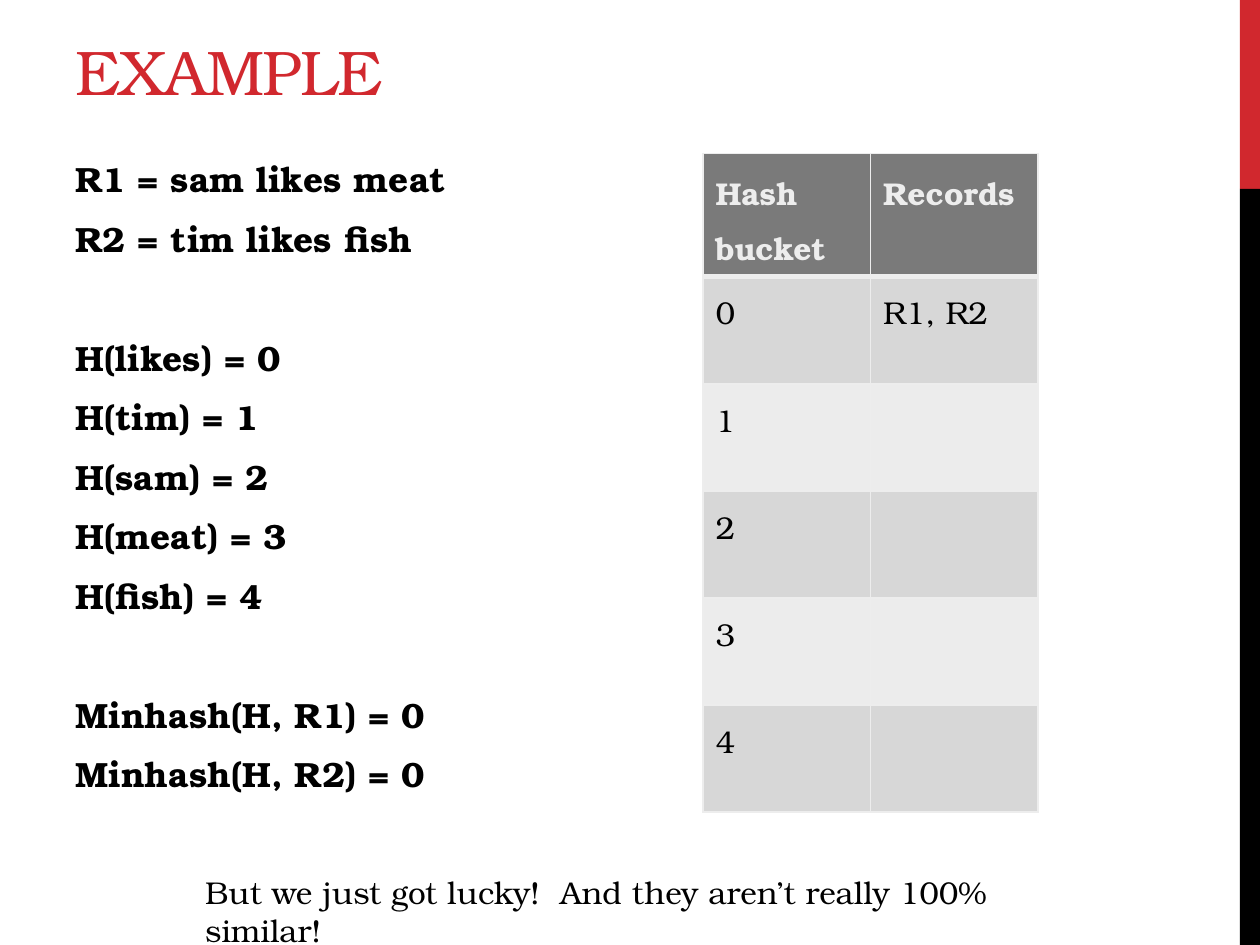
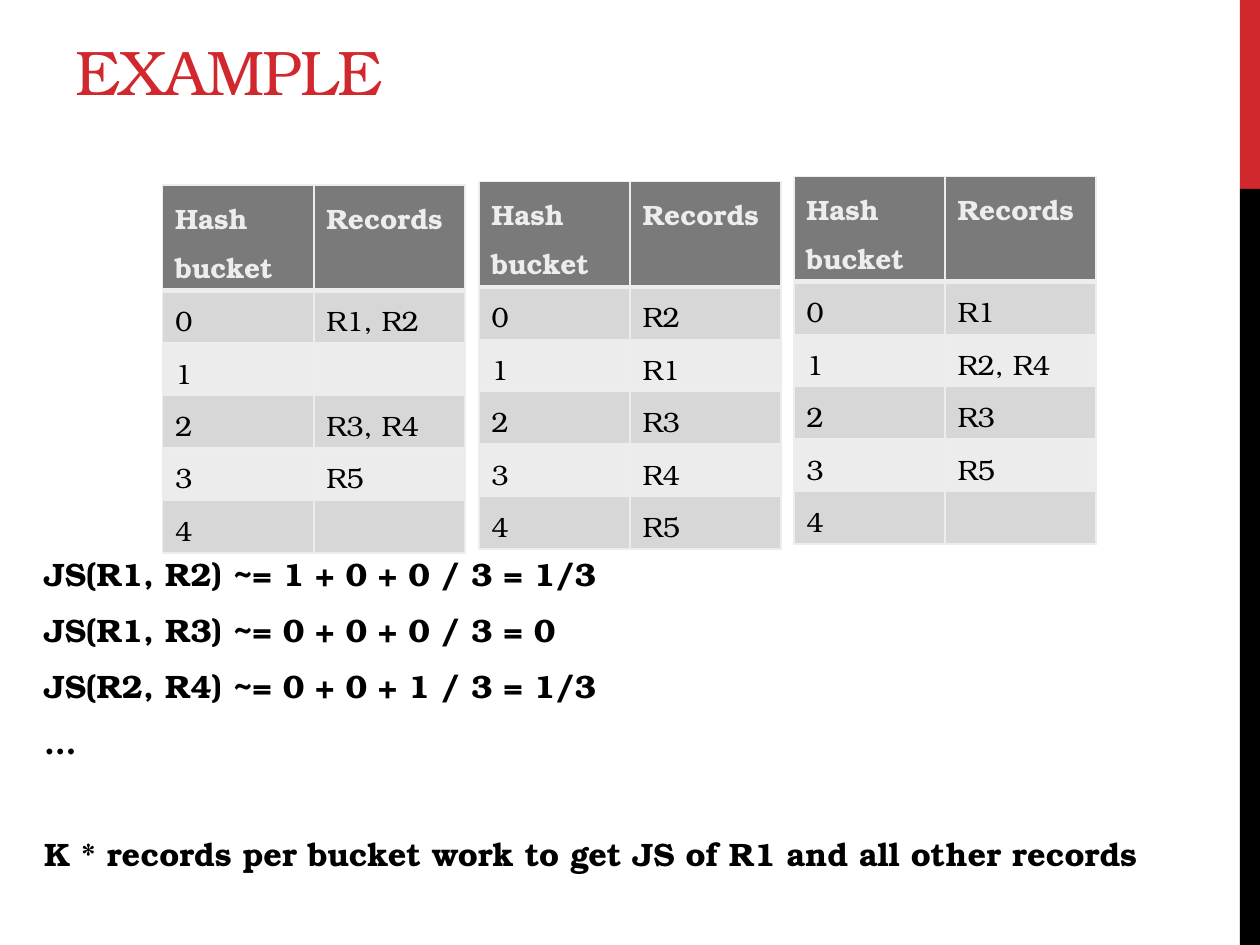
from lxml import etree
from pptx import Presentation
from pptx import util as u
from pptx.dml.color import RGBColor
from pptx.enum import shapes, text
from pptx.oxml import ns

RED = RGBColor(0xD1, 0x28, 0x2E)
BLACK = RGBColor(0x00, 0x00, 0x00)
HEADER_GRAY = RGBColor(0x7A, 0x7A, 0x7A)
DARK_BAND = RGBColor(0xD7, 0xD7, 0xD7)
LIGHT_BAND = RGBColor(0xEC, 0xEC, 0xEC)
PALE = RGBColor(0xED, 0xED, 0xED)
FONT = "TeX Gyre Bonum"
TABLE_HEADER = ("Hash bucket", "Records")


def place(shape, left, top, width, height):
    box = {"left": left, "top": top, "width": width, "height": height}
    for name, value in box.items():
        setattr(shape, name, u.Inches(value))


def add_run(paragraph, words, size, color, bold=False):
    run = paragraph.add_run()
    run.text = words
    font_values = {"name": FONT, "size": u.Pt(size), "bold": bold}
    for name, value in font_values.items():
        setattr(run.font, name, value)
    run.font.color.rgb = color
    return run


def add_master_bands(presentation, slide):
    """Draw the right-hand bands and move them to the slide master."""
    master_tree = presentation.slide_master.shapes.element
    bands = ((0, 1.5, RED), (1.5, 6, BLACK))
    for number, (top, height, color) in enumerate(bands):
        band = slide.shapes.add_shape(
            shapes.MSO_SHAPE.RECTANGLE, u.Inches(9.84), u.Inches(top),
            u.Inches(0.16), u.Inches(height))
        band.shadow.inherit = False
        band.fill.solid()
        band.fill.fore_color.rgb = color
        band.line.fill.background()
        band.element.nvSpPr.cNvPr.set("id", str(100 + number))
        master_tree.append(band.element)


def set_title(slide, words):
    title = slide.shapes.title
    place(title, 0.5, 0.03, 9.34, 0.88)
    frame = title.text_frame
    frame.auto_size = text.MSO_AUTO_SIZE.NONE
    frame.vertical_anchor = text.MSO_ANCHOR.BOTTOM
    paragraph = frame.paragraphs[0]
    paragraph.alignment = text.PP_ALIGN.LEFT
    run = add_run(paragraph, words, 36, RED)
    run.font._element.set("spc", "-60")


def set_body(slide, box, groups, size):
    """Fill the body with groups of lines, one line's height apart."""
    body = slide.placeholders[1]
    place(body, *box)
    frame = body.text_frame
    frame.auto_size = text.MSO_AUTO_SIZE.NONE
    before, after = 0.2 * size, 6
    line_pitch = 1.2 * size + before + after
    paragraph = frame.paragraphs[0]
    for group_number, group in enumerate(groups):
        for line_number, line in enumerate(group):
            starts_group = group_number > 0 and line_number == 0
            if group_number or line_number:
                paragraph = frame.add_paragraph()
            paragraph.space_before = u.Pt(before + line_pitch * starts_group)
            paragraph.space_after = u.Pt(after)
            properties = paragraph._p.get_or_add_pPr()
            properties.set("marL", "0")
            properties.set("indent", "0")
            etree.SubElement(properties, ns.qn("a:buNone"))
            add_run(paragraph, line, size, BLACK, bold=True)


def set_borders(cell, bottom_width):
    properties = cell._tc.get_or_add_tcPr()
    widths = {"lnL": 1, "lnR": 1, "lnT": 1, "lnB": bottom_width}
    for position, (side, width) in enumerate(widths.items()):
        line = etree.Element(ns.qn(f"a:{side}"), w=str(u.Pt(width)))
        fill = etree.SubElement(line, ns.qn("a:solidFill"))
        etree.SubElement(fill, ns.qn("a:srgbClr"), val=str(PALE))
        properties.insert(position, line)


def add_bucket_table(slide, left, top, column_width, row_heights, size,
                     records, margin):
    """Add a table of hash buckets; records holds one text per bucket."""
    rows = [TABLE_HEADER]
    rows += [(str(bucket), names) for bucket, names in enumerate(records)]
    header_height, bucket_height = row_heights
    table = slide.shapes.add_table(
        len(rows), 2, u.Inches(left), u.Inches(top),
        u.Inches(2 * column_width),
        u.Inches(header_height + bucket_height * len(records))).table
    for column in table.columns:
        column.width = u.Inches(column_width)
    for row_number, row in enumerate(rows):
        is_header = row_number == 0
        table.rows[row_number].height = u.Inches(
            header_height if is_header else bucket_height)
        band = DARK_BAND if row_number % 2 else LIGHT_BAND
        for column_number, words in enumerate(row):
            cell = table.cell(row_number, column_number)
            cell.margin_top = cell.margin_bottom = u.Inches(margin)
            cell.fill.solid()
            cell.fill.fore_color.rgb = HEADER_GRAY if is_header else band
            set_borders(cell, 3 if is_header else 1)
            paragraph = cell.text_frame.paragraphs[0]
            paragraph.line_spacing = 1.2
            if words:
                add_run(paragraph, words, size,
                        PALE if is_header else BLACK, bold=is_header)
            else:
                paragraph.font.size = u.Pt(size)


def add_note(slide, box, words):
    note = slide.shapes.add_textbox(*map(u.Inches, box))
    note.text_frame.word_wrap = True
    add_run(note.text_frame.paragraphs[0], words, 18, BLACK)


def add_example_slide(presentation):
    slide = presentation.slides.add_slide(presentation.slide_layouts[1])
    set_title(slide, "EXAMPLE")
    return slide


def build_single_hash_slide(slide):
    set_body(slide, (0.5, 1.2, 3.25, 5.38), (
        ("R1 = sam likes meat", "R2 = tim likes fish"),
        ("H(likes) = 0", "H(tim) = 1", "H(sam) = 2", "H(meat) = 3",
         "H(fish) = 4"),
        ("Minhash(H, R1) = 0", "Minhash(H, R2) = 0")), 20)
    add_bucket_table(slide, 5.58, 1.22, 1.33, (0.84, 0.85), 18,
                     ("R1, R2", "", "", "", ""), 0.05)
    add_note(slide, (1.53, 6.88, 7.29, 0.4),
             "But we just got lucky!  And they aren’t really 100% similar!")


def build_three_hashes_slide(slide):
    set_body(slide, (0.25, 4.35, 8.98, 2.4), (
        ("JS(R1, R2) ~= 1 + 0 + 0 / 3 = 1/3",
         "JS(R1, R3) ~= 0 + 0 + 0 / 3 = 0",
         "JS(R2, R4) ~= 0 + 0 + 1 / 3 = 1/3", "…"),
        ("K * records per bucket work to get JS of R1 and all other records",
         )), 18.5)
    tables = (
        (1.29, 1.47, ("R1, R2", "", "R3, R4", "R5", "")),
        (3.8, 1.44, ("R2", "R1", "R3", "R4", "R5")),
        (6.3, 1.4, ("R1", "R2, R4", "R3", "R5", "")))
    for left, top, records in tables:
        add_bucket_table(slide, left, top, 1.2, (0.74, 0.4), 16, records,
                         0.03)


def main():
    presentation = Presentation()
    presentation.slide_width = u.Inches(10)
    presentation.slide_height = u.Inches(7.5)
    single_hash = add_example_slide(presentation)
    add_master_bands(presentation, single_hash)
    build_single_hash_slide(single_hash)
    build_three_hashes_slide(add_example_slide(presentation))
    presentation.save("out.pptx")


if __name__ == "__main__":
    main()
